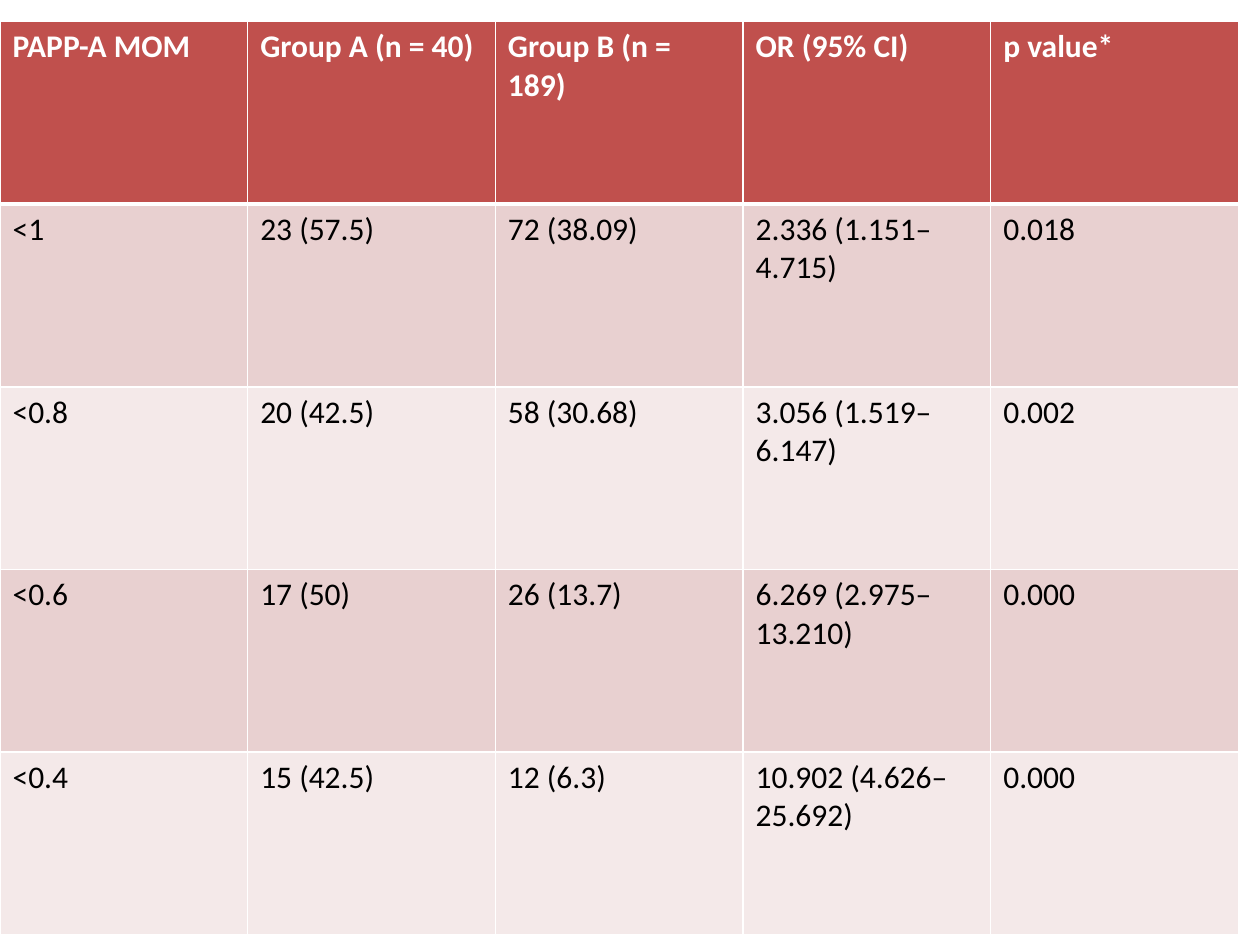
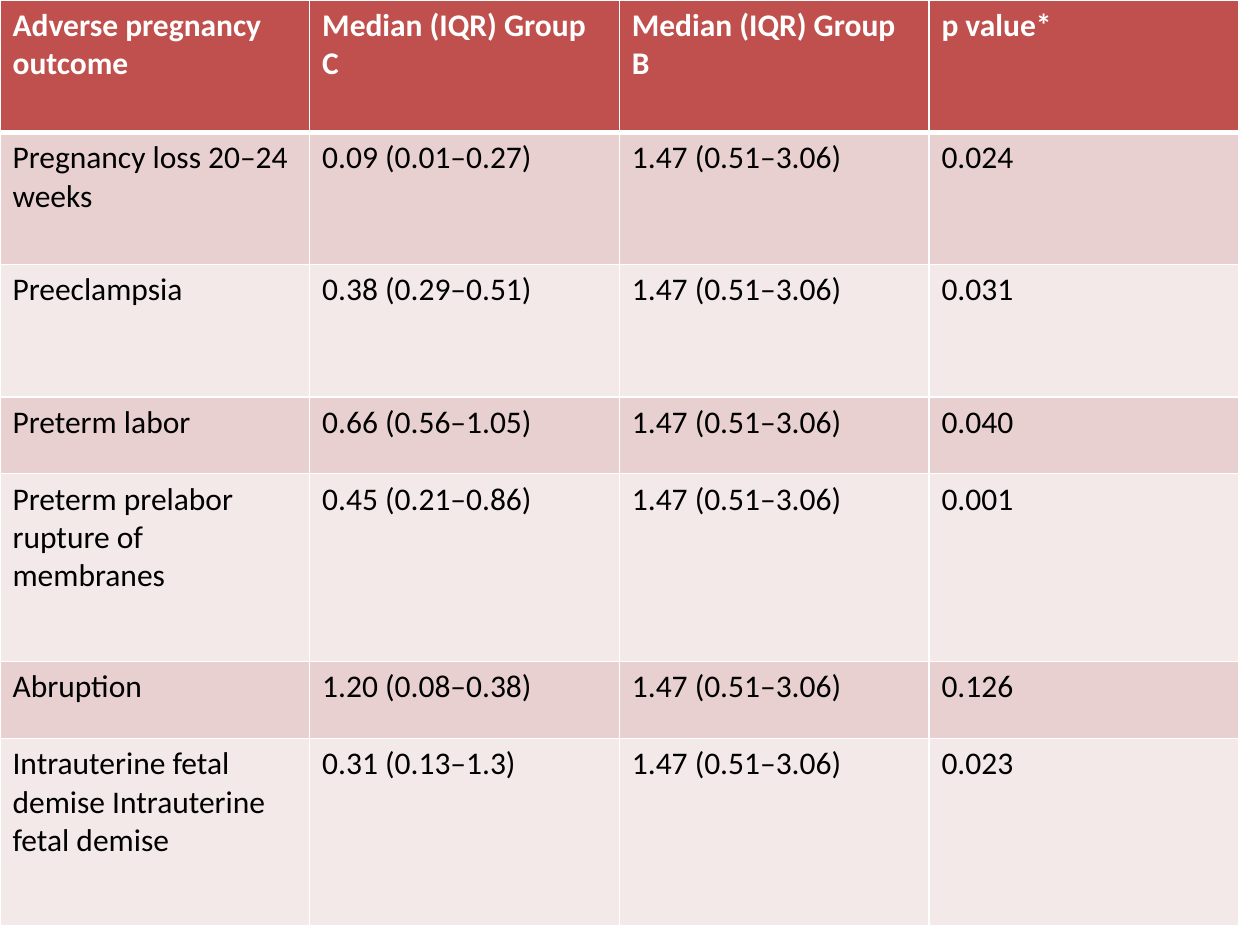
from dataclasses import dataclass

import pptx
import pptx.dml.color
import pptx.oxml.ns
import pptx.presentation
import pptx.table
import pptx.util
from lxml import etree
from pptx.util import Inches

COLOURS = {
    "header": "C0504D",
    "odd_row": "E8D0D0",
    "even_row": "F4E9E9",
    "border": "FFFFFF",
    "header_text": "FFFFFF",
    "body_text": "000000",
}
FONT = "Calibri"
TEXT_SIZE = pptx.util.Pt(18)
TABLE_WIDTH = 9.83
THIN, THICK = 1, 3
BLANK_LAYOUT = 6
GROUP_B_MEDIAN = "1.47 (0.51–3.06)"


@dataclass
class TableSlide:
    top: float
    row_heights: list[float]
    header: list[str]
    body: list[list[str]]


PAPP_A_ODDS = TableSlide(
    top=0.17,
    row_heights=[1.45] * 5,
    header=["PAPP-A MOM", "Group A (n = 40)", "Group B (n = 189)", "OR (95% CI)", "p value*"],
    body=[
        ["<1", "23 (57.5)", "72 (38.09)", "2.336 (1.151–4.715)", "0.018"],
        ["<0.8", "20 (42.5)", "58 (30.68)", "3.056 (1.519–6.147)", "0.002"],
        ["<0.6", "17 (50)", "26 (13.7)", "6.269 (2.975–13.210)", "0.000"],
        ["<0.4", "15 (42.5)", "12 (6.3)", "10.902 (4.626–25.692)", "0.000"],
    ],
)

OUTCOME_MEDIANS = TableSlide(
    top=0,
    row_heights=[1.05, 1.05, 1.05, 0.61, 1.49, 0.61, 1.49],
    header=["Adverse pregnancy outcome", "Median (IQR) Group C", "Median (IQR) Group B", "p value*"],
    body=[
        [outcome, group_c_median, GROUP_B_MEDIAN, p_value]
        for outcome, group_c_median, p_value in [
            ("Pregnancy loss 20–24 weeks", "0.09 (0.01–0.27)", "0.024"),
            ("Preeclampsia", "0.38 (0.29–0.51)", "0.031"),
            ("Preterm labor", "0.66 (0.56–1.05)", "0.040"),
            ("Preterm prelabor rupture of membranes", "0.45 (0.21–0.86)", "0.001"),
            ("Abruption", "1.20 (0.08–0.38)", "0.126"),
            ("Intrauterine fetal demise Intrauterine fetal demise", "0.31 (0.13–1.3)", "0.023"),
        ]
    ],
)


def rgb(name: str) -> pptx.dml.color.RGBColor:
    return pptx.dml.color.RGBColor.from_string(COLOURS[name])


def set_borders(cell: pptx.table._Cell, top: int, bottom: int) -> None:
    """Line all four sides; must run before the cell gets its fill."""
    qn = pptx.oxml.ns.qn
    properties = cell._tc.get_or_add_tcPr()
    for side, points in {"L": THIN, "R": THIN, "T": top, "B": bottom}.items():
        line = etree.SubElement(properties, qn(f"a:ln{side}"), w=str(pptx.util.Pt(points)))
        fill = etree.SubElement(line, qn("a:solidFill"))
        etree.SubElement(fill, qn("a:srgbClr"), val=COLOURS["border"])


def format_cell(cell: pptx.table._Cell, text: str, row: int) -> None:
    is_header = row == 0
    set_borders(cell, top=THICK if row == 1 else THIN, bottom=THICK if is_header else THIN)
    cell.fill.solid()
    fill_name = "header" if is_header else "odd_row" if row % 2 else "even_row"
    cell.fill.fore_color.rgb = rgb(fill_name)

    cell.text_frame.text = text
    font = cell.text_frame.paragraphs[0].runs[0].font
    font.name = FONT
    font.size = TEXT_SIZE
    font.bold = is_header
    font.color.rgb = rgb("header_text" if is_header else "body_text")


def add_table_slide(deck: pptx.presentation.Presentation, content: TableSlide) -> None:
    page = deck.slides.add_slide(deck.slide_layouts[BLANK_LAYOUT])
    rows = [content.header, *content.body]
    table = page.shapes.add_table(
        len(rows), len(content.header),
        Inches(0), Inches(content.top),
        Inches(TABLE_WIDTH), Inches(sum(content.row_heights)),
    ).table
    for table_row, height in zip(table.rows, content.row_heights):
        table_row.height = Inches(height)
    for row, texts in enumerate(rows):
        for column, text in enumerate(texts):
            format_cell(table.cell(row, column), text, row)


def main() -> None:
    deck = pptx.Presentation()
    deck.slide_width, deck.slide_height = Inches(10), Inches(7.5)
    for content in (PAPP_A_ODDS, OUTCOME_MEDIANS):
        add_table_slide(deck, content)
    deck.save("out.pptx")


if __name__ == "__main__":
    main()
